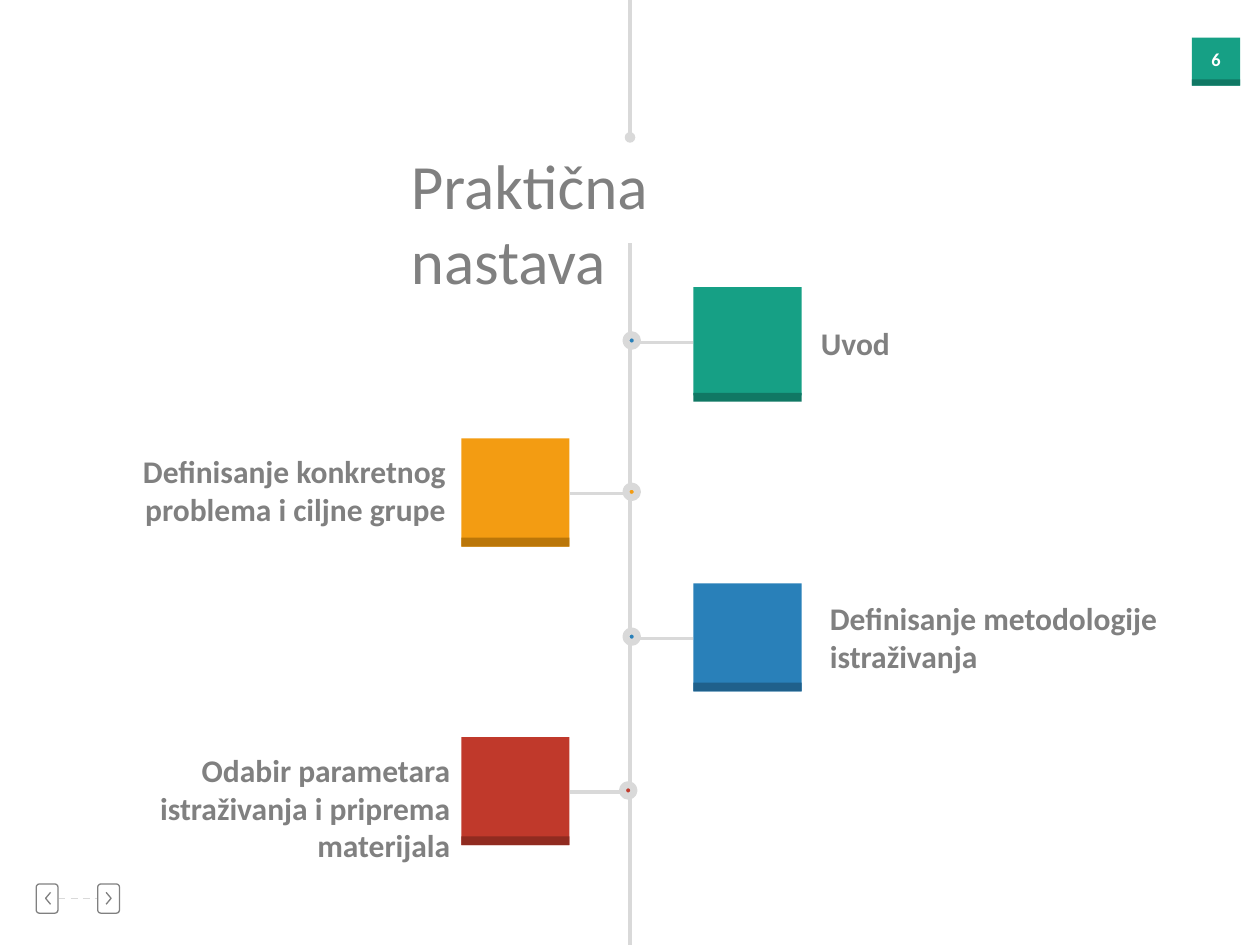
from lxml.etree import SubElement
from pptx import Presentation
from pptx.dml.color import RGBColor
from pptx.enum.dml import MSO_LINE
from pptx.enum.shapes import MSO_CONNECTOR, MSO_SHAPE
from pptx.enum.text import MSO_ANCHOR, MSO_AUTO_SIZE, PP_ALIGN
from pptx.oxml.ns import qn
from pptx.util import Cm, Pt

TITLE = "Praktična nastava"
PAGE = "6"
GREY, RAIL, WHITE = "808080", "D9D9D9", "FFFFFF"
GREEN, DARK_GREEN, BLUE = "16A085", "107864", "2980B9"
STEPS = [
    dict(text="Uvod", side="right", top=5.79, height=2.31, fill=GREEN, shade=DARK_GREEN,
         dot=BLUE, dot_left=12.62, label=(16.08, 6.4, 2.11, 1.02), align=PP_ALIGN.RIGHT),
    dict(text="Definisanje konkretnog problema i ciljne grupe", side="left",
         top=8.84, height=2.18, fill="F39C12", shade="BA7609", dot="F39C12",
         dot_left=12.62, label=(1.52, 8.99, 7.72, 1.8), align=PP_ALIGN.RIGHT),
    dict(text="Definisanje metodologije istraživanja", side="right",
         top=11.76, height=2.18, fill=BLUE, shade="1F608B", dot=BLUE,
         dot_left=12.62, label=(16.48, 11.96, 7.19, 1.8), align=PP_ALIGN.LEFT),
    dict(text="Odabir parametara istraživanja i priprema materijala", side="left",
         top=14.86, height=2.18, fill="C0392B", shade="902B20", dot="C0392B",
         dot_left=12.55, label=(1.07, 15.01, 8.26, 1.8), align=PP_ALIGN.RIGHT),
]
TILE_LEFT = {"right": 13.98, "left": 9.3}
SPOKE = {"right": (12.86, 13.96), "left": (11.5, 12.62)}
TILE, STRIP, DOT, AXIS = 2.18, 0.18, 0.23, 12.7
NAV_BUTTONS = [(0.73, 0.97, -0.1), (1.97, 2.19, 0.1)]


def rgb(code):
    return RGBColor.from_string(code)


def write(frame, text, size=18, color=GREY, bold=True, align=PP_ALIGN.LEFT, wrap=True):
    frame.word_wrap = wrap
    frame.auto_size = MSO_AUTO_SIZE.NONE
    frame.vertical_anchor = MSO_ANCHOR.TOP
    paragraph = frame.paragraphs[0]
    paragraph.alignment = align
    run = paragraph.add_run()
    run.text = text
    run.font.name, run.font.size, run.font.bold = "Calibri", Pt(size), bold
    run.font.color.rgb = rgb(color)


def place(shapes, kind, left, top, width, height, fill=None, line=None, weight=1):
    shape = shapes.add_shape(kind, Cm(left), Cm(top), Cm(width), Cm(height))
    shape.shadow.inherit = False
    if fill:
        shape.fill.solid()
        shape.fill.fore_color.rgb = rgb(fill)
    else:
        shape.fill.background()
    if line:
        shape.line.color.rgb = rgb(line)
        shape.line.width = Pt(weight)
    else:
        shape.line.fill.background()
    return shape


def connect(shapes, x1, y1, x2, y2, weight=2, dash=None, tail=None):
    rail = shapes.add_connector(MSO_CONNECTOR.STRAIGHT, Cm(x1), Cm(y1), Cm(x2), Cm(y2))
    rail.line.color.rgb = rgb(RAIL)
    rail.line.width = Pt(weight)
    if dash:
        rail.line.dash_style = dash
    if tail:
        SubElement(rail.line._get_or_add_ln(), qn("a:tailEnd"), type=tail)
    SubElement(rail._element.spPr, qn("a:effectLst"))


def add_navigation(shapes):
    connect(shapes, 1.18, 18.11, 1.96, 18.11, weight=1, dash=MSO_LINE.DASH)
    for left, middle, reach in NAV_BUTTONS:
        button = place(shapes, MSO_SHAPE.ROUNDED_RECTANGLE, left, 17.82, 0.44, 0.59,
                       line=GREY, weight=0.75)
        button.adjustments[0] = 0.15
        start = middle - reach / 2
        outline = shapes.build_freeform(Cm(start), Cm(17.99))
        outline.add_line_segments([(Cm(start + reach), Cm(18.11)), (Cm(start), Cm(18.23))],
                                  close=False)
        chevron = outline.convert_to_shape()
        chevron.shadow.inherit = False
        chevron.fill.background()
        chevron.line.color.rgb = rgb(GREY)
        chevron.line.width = Pt(0.75)


def add_page_number(shapes):
    place(shapes, MSO_SHAPE.RECTANGLE, 24.03, 0.76, 0.97, 0.97, GREEN)
    place(shapes, MSO_SHAPE.RECTANGLE, 24.03, 1.6, 0.97, 0.13, DARK_GREEN)
    number = shapes.add_textbox(Cm(24.03), Cm(0.84), Cm(0.97), Cm(0.71))
    write(number.text_frame, PAGE, size=10.5, color=WHITE, align=PP_ALIGN.CENTER, wrap=False)


def add_step(shapes, step):
    top, left = step["top"], TILE_LEFT[step["side"]]
    spoke_start, spoke_end = SPOKE[step["side"]]
    connect(shapes, spoke_start, top + 1.11, spoke_end, top + 1.11)
    place(shapes, MSO_SHAPE.OVAL, step["dot_left"], top + 0.96, DOT, DOT,
          step["dot"], RAIL, 4)
    place(shapes, MSO_SHAPE.RECTANGLE, left, top, TILE, TILE, step["fill"])
    place(shapes, MSO_SHAPE.RECTANGLE, left, top + step["height"] - STRIP, TILE, STRIP,
          step["shade"])
    label = shapes.add_textbox(*map(Cm, step["label"]))
    write(label.text_frame, step["text"], align=step["align"])


def main():
    deck = Presentation()
    deck.slide_width, deck.slide_height = Cm(25.4), Cm(19.05)
    slide = deck.slides.add_slide(deck.slide_layouts[5])
    shapes = slide.shapes
    add_navigation(shapes)
    add_page_number(shapes)
    title = shapes.title
    title.left, title.top, title.width, title.height = Cm(8.03), Cm(2.82), Cm(9), Cm(1.8)
    write(title.text_frame, TITLE, size=36, bold=False)
    connect(shapes, AXIS, 0, AXIS, 2.77, tail="oval")
    connect(shapes, AXIS, 4.9, AXIS, 19.05)
    for step in STEPS:
        add_step(shapes, step)
    deck.save("out.pptx")


if __name__ == "__main__":
    main()
